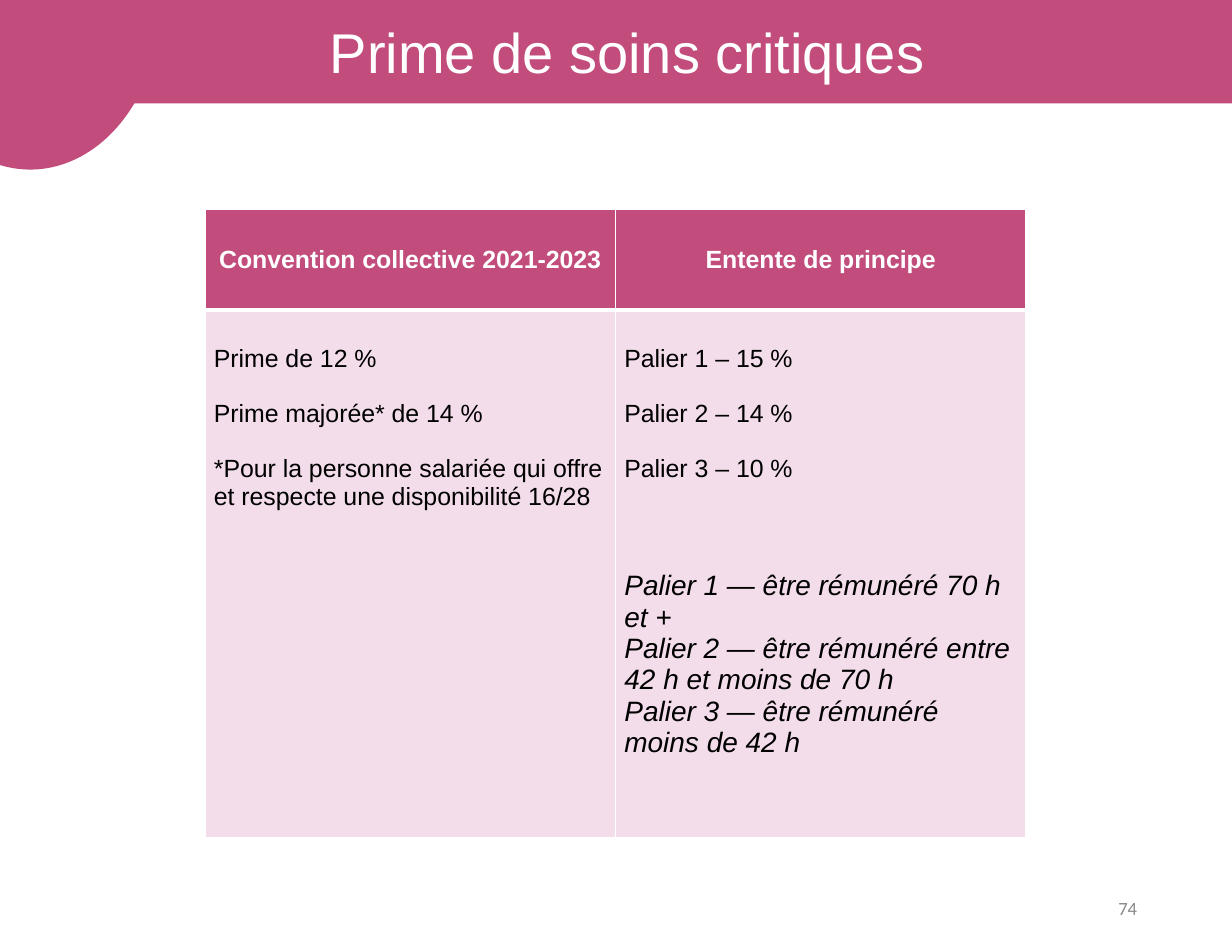
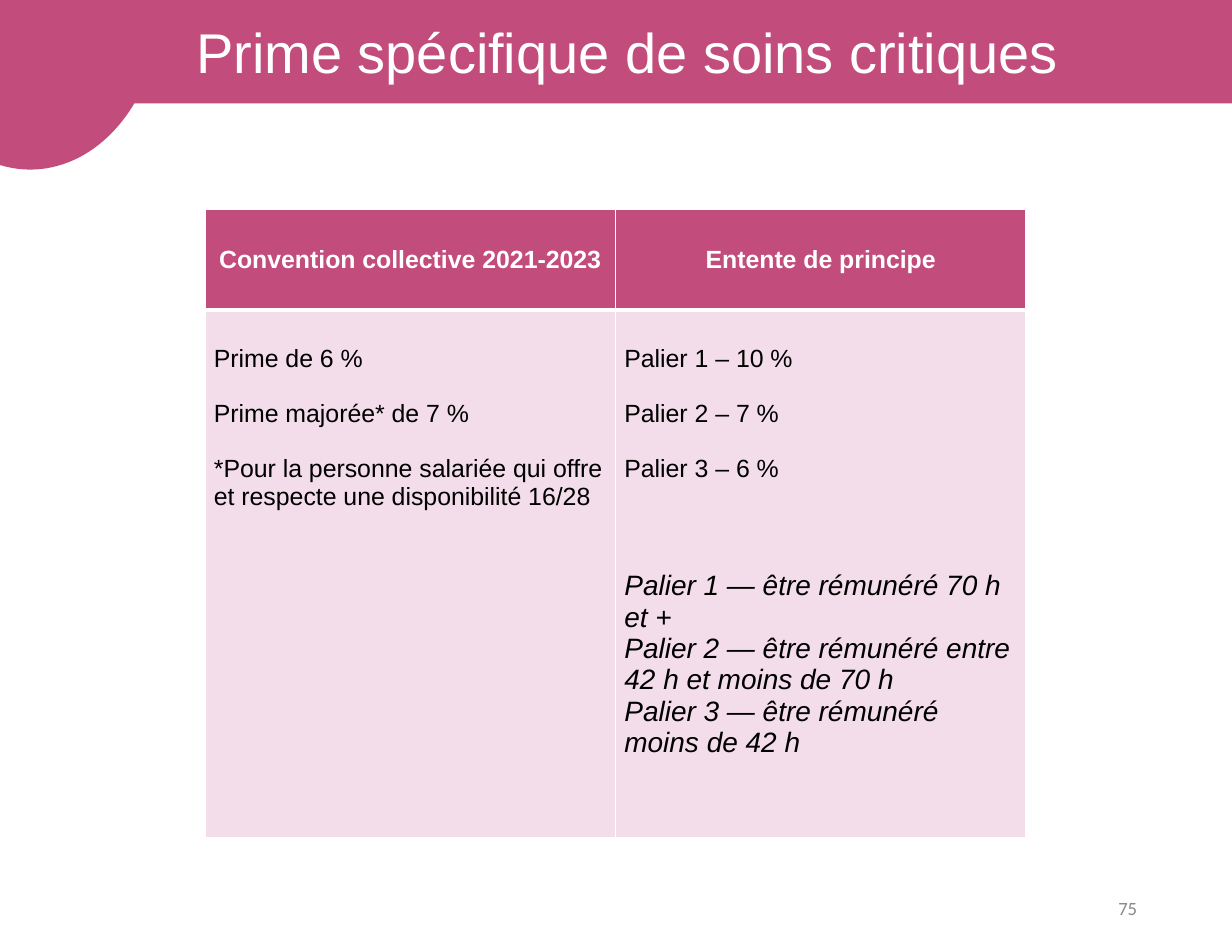
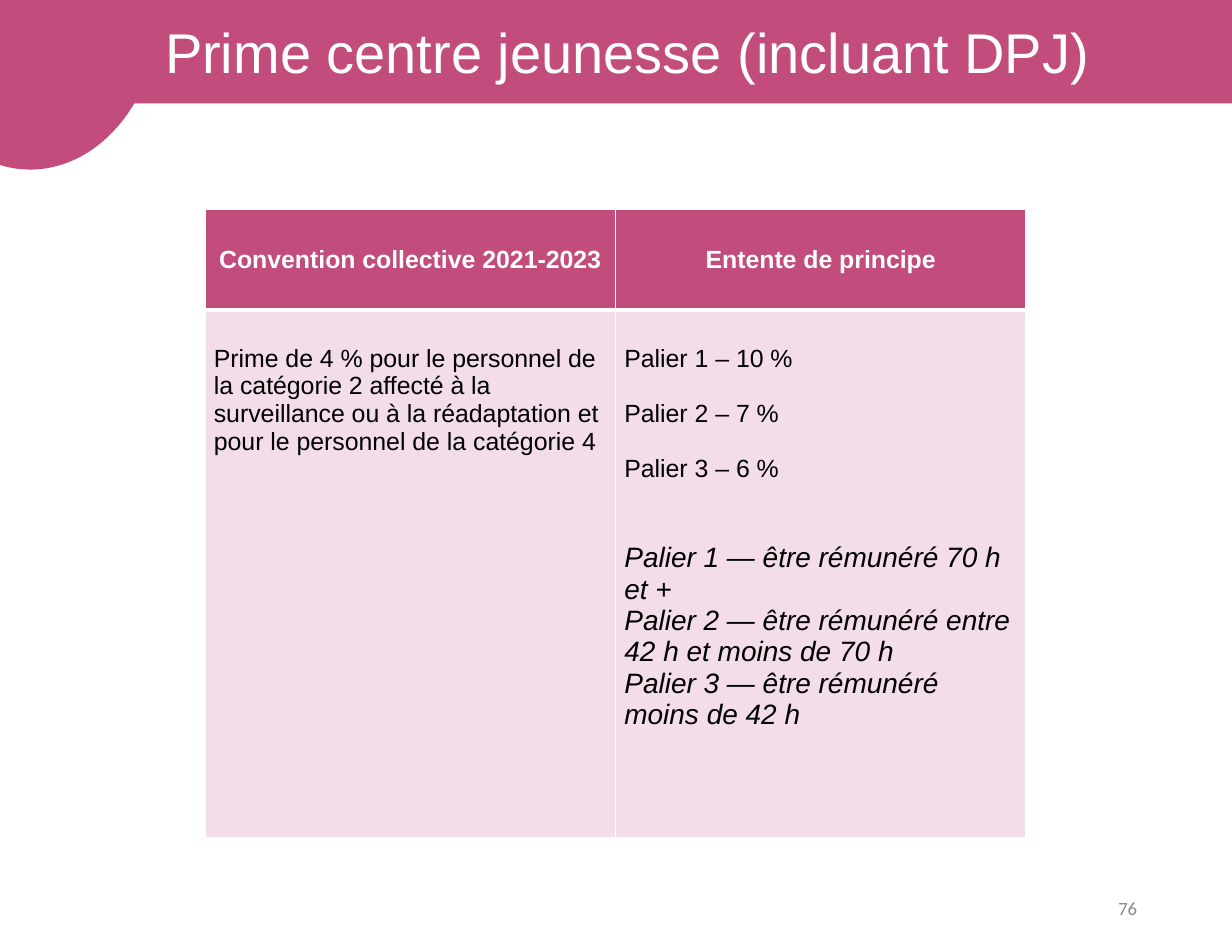
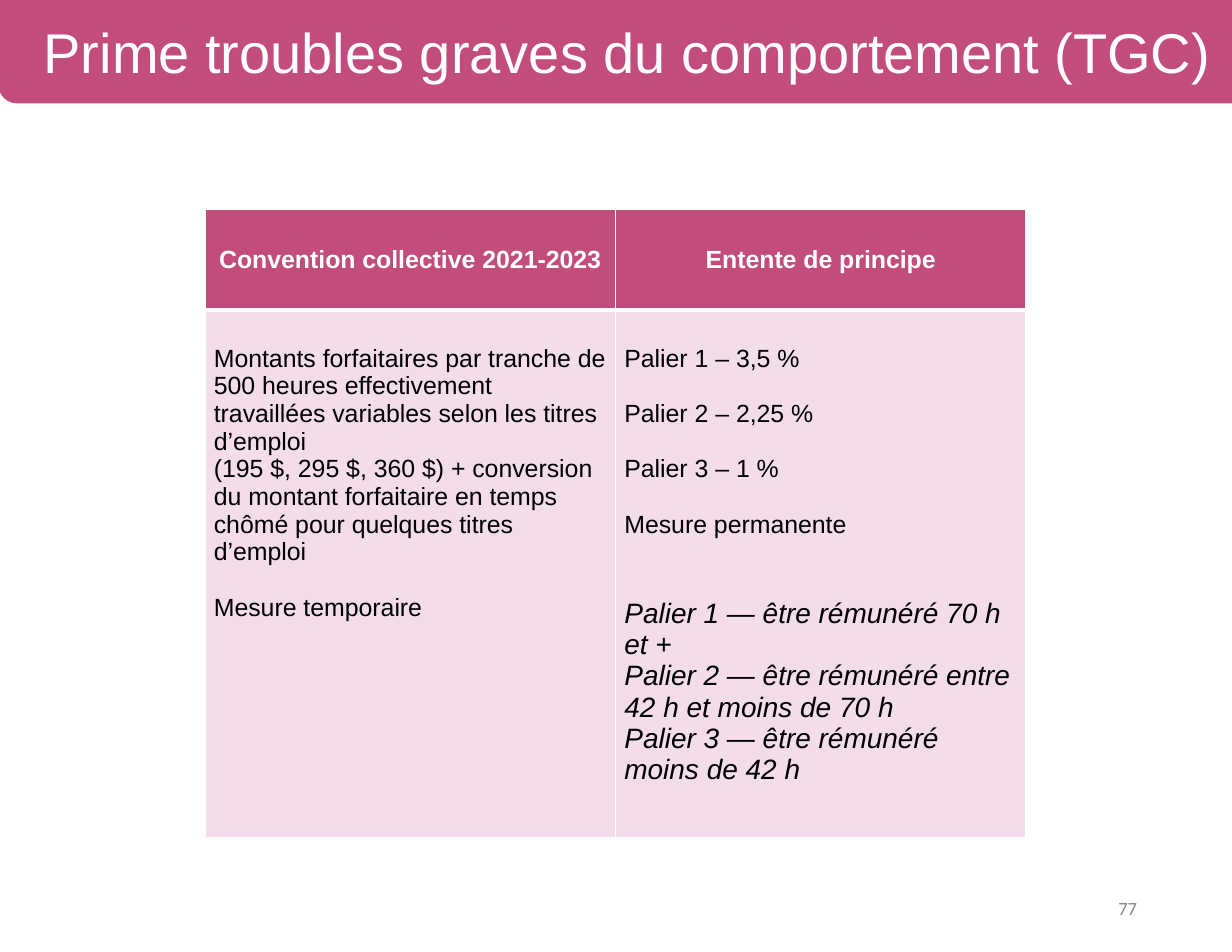
"""Build four slides comparing bonuses in the collective agreement and the agreement in principle."""
import pptx
import pptx.util
import pptx.dml.color
import pptx.enum.shapes
import pptx.enum.text
import pptx.oxml.ns
import lxml.etree

Cm, Pt = pptx.util.Cm, pptx.util.Pt
RGBColor = pptx.dml.color.RGBColor
SHAPE = pptx.enum.shapes.MSO_SHAPE
ALIGN = pptx.enum.text.PP_ALIGN
MIDDLE = pptx.enum.text.MSO_ANCHOR.MIDDLE
qn = pptx.oxml.ns.qn

FIRST_NUMBER = 74
HEADERS = ["Convention collective 2021-2023", "Entente de principe"]
AVAILABILITY = "*Pour la personne salariée qui offre et respecte une disponibilité 16/28"
CONDITIONS = [
    "Palier 1 — être rémunéré 70 h et +",
    "Palier 2 — être rémunéré entre 42 h et moins de 70 h",
    "Palier 3 — être rémunéré moins de 42 h",
]
CORNER_DISC = (-2.26, -3.81)
HIDDEN_DISC = (-5.51, -4.32)
SLIDES = [
    {
        "title": "Prime de soins critiques",
        "current": [["Prime de 12 %"], ["Prime majorée* de 14 %"], [AVAILABILITY]],
        "rates": ["15 %", "14 %", "10 %"],
        "extra": [],
        "conditions_gap": 56,
        "disc": CORNER_DISC,
    },
    {
        "title": "Prime spécifique de soins critiques",
        "current": [["Prime de 6 %"], ["Prime majorée* de 7 %"], [AVAILABILITY]],
        "rates": ["10 %", "7 %", "6 %"],
        "extra": [],
        "conditions_gap": 56,
        "disc": CORNER_DISC,
    },
    {
        "title": "Prime centre jeunesse (incluant DPJ)",
        "current": [[
            "Prime de 4 % pour le personnel de la catégorie 2 affecté à la surveillance "
            "ou à la réadaptation et pour le personnel de la catégorie 4"
        ]],
        "rates": ["10 %", "7 %", "6 %"],
        "extra": [],
        "conditions_gap": 38,
        "disc": CORNER_DISC,
    },
    {
        "title": "Prime troubles graves du comportement (TGC)",
        "current": [
            [
                "Montants forfaitaires par tranche de 500 heures effectivement travaillées "
                "variables selon les titres d’emploi",
                "(195 $, 295 $, 360 $) + conversion du montant forfaitaire en temps chômé "
                "pour quelques titres d’emploi",
            ],
            ["Mesure temporaire"],
        ],
        "rates": ["3,5 %", "2,25 %", "1 %"],
        "extra": ["Mesure permanente"],
        "conditions_gap": 38,
        "disc": HIDDEN_DISC,
    },
]

ROSE = RGBColor(0xC2, 0x4C, 0x7B)
PALE_ROSE = RGBColor(0xF3, 0xDD, 0xEA)
WHITE = RGBColor(0xFF, 0xFF, 0xFF)
BLACK = RGBColor(0, 0, 0)
GREY = RGBColor(0x88, 0x88, 0x88)

BLANK_LINE = 17.8
COL_WIDTH = 9.31
ROW_HEIGHTS = [2.29, 11.96]
MARGIN_X, MARGIN_Y = 0.2, 0.16
BODY_TOP = 0.78


def write(p, text, size, color, font="Arial", bold=False, italic=False, align=ALIGN.LEFT, before=0):
    p.alignment = align
    p.space_before = Pt(before)
    r = p.add_run()
    r.text = text
    r.font.size = Pt(size)
    r.font.name = font
    r.font.bold = bold
    r.font.italic = italic
    r.font.color.rgb = color


def add_rose_shape(slide, kind, left, top, width, height):
    sp = slide.shapes.add_shape(kind, Cm(left), Cm(top), Cm(width), Cm(height))
    sp.shadow.inherit = False
    sp.fill.solid()
    sp.fill.fore_color.rgb = ROSE
    sp.line.color.rgb = ROSE
    sp.line.width = Pt(2)
    return sp


def add_number(slide, number):
    sp = slide.shapes.add_textbox(Cm(19.74), Cm(20.02), Cm(6.3), Cm(1.14))
    tf = sp.text_frame
    tf.word_wrap = True
    tf.vertical_anchor = MIDDLE
    write(tf.paragraphs[0], str(number), 12, GREY, font="Calibri", align=ALIGN.RIGHT)


def style_cell(cell, fill, borders):
    cell.fill.solid()
    cell.fill.fore_color.rgb = fill
    cell.margin_left = cell.margin_right = Cm(MARGIN_X)
    cell.margin_top = cell.margin_bottom = Cm(MARGIN_Y)
    props = cell._tc.get_or_add_tcPr()
    for i, (side, width) in enumerate(zip("LRTB", borders)):
        ln = lxml.etree.Element(qn(f"a:ln{side}"), w=str(Pt(width)))
        solid = lxml.etree.SubElement(ln, qn("a:solidFill"))
        lxml.etree.SubElement(solid, qn("a:srgbClr"), val=str(WHITE))
        props.insert(i, ln)


def fill_body(cell, groups, conditions=(), conditions_gap=0):
    style_cell(cell, PALE_ROSE, (1, 1, 3, 1))
    cell.margin_top = Cm(BODY_TOP)
    lines = [(text, 16, False, BLANK_LINE if g and not i else 0)
             for g, group in enumerate(groups) for i, text in enumerate(group)]
    lines += [(text, 18, True, 0 if i else conditions_gap) for i, text in enumerate(conditions)]
    tf = cell.text_frame
    for i, (text, size, italic, before) in enumerate(lines):
        p = tf.add_paragraph() if i else tf.paragraphs[0]
        write(p, text, size, BLACK, italic=italic, before=before)


def add_comparison(slide, content):
    table = slide.shapes.add_table(2, 2, Cm(4.65), Cm(4.75), Cm(2 * COL_WIDTH), Cm(sum(ROW_HEIGHTS))).table
    table.horz_banding = False
    for col in table.columns:
        col.width = Cm(COL_WIDTH)
    for row, height in zip(table.rows, ROW_HEIGHTS):
        row.height = Cm(height)
    for i, header in enumerate(HEADERS):
        cell = table.cell(0, i)
        style_cell(cell, ROSE, (1, 1, 1, 3))
        cell.vertical_anchor = MIDDLE
        write(cell.text_frame.paragraphs[0], header, 16, WHITE, bold=True, align=ALIGN.CENTER)
    tiers = [[f"Palier {n} – {rate}"] for n, rate in enumerate(content["rates"], 1)]
    extras = [[text] for text in content["extra"]]
    fill_body(table.cell(1, 0), content["current"])
    fill_body(table.cell(1, 1), tiers + extras, CONDITIONS, content["conditions_gap"])


def main():
    prs = pptx.Presentation()
    prs.slide_width, prs.slide_height = Cm(27.94), Cm(21.59)
    for number, content in enumerate(SLIDES, FIRST_NUMBER):
        slide = prs.slides.add_slide(prs.slide_layouts[6])
        band = add_rose_shape(slide, SHAPE.ROUNDED_RECTANGLE, 0, 0, 28.45, 2.31)
        band.text_frame.word_wrap = True
        band.text_frame.vertical_anchor = MIDDLE
        write(band.text_frame.paragraphs[0], content["title"], 36, WHITE, align=ALIGN.CENTER)
        add_rose_shape(slide, SHAPE.OVAL, *content["disc"], 5.89, 7.62)
        add_number(slide, number)
        add_comparison(slide, content)
    prs.save("out.pptx")


if __name__ == "__main__":
    main()
